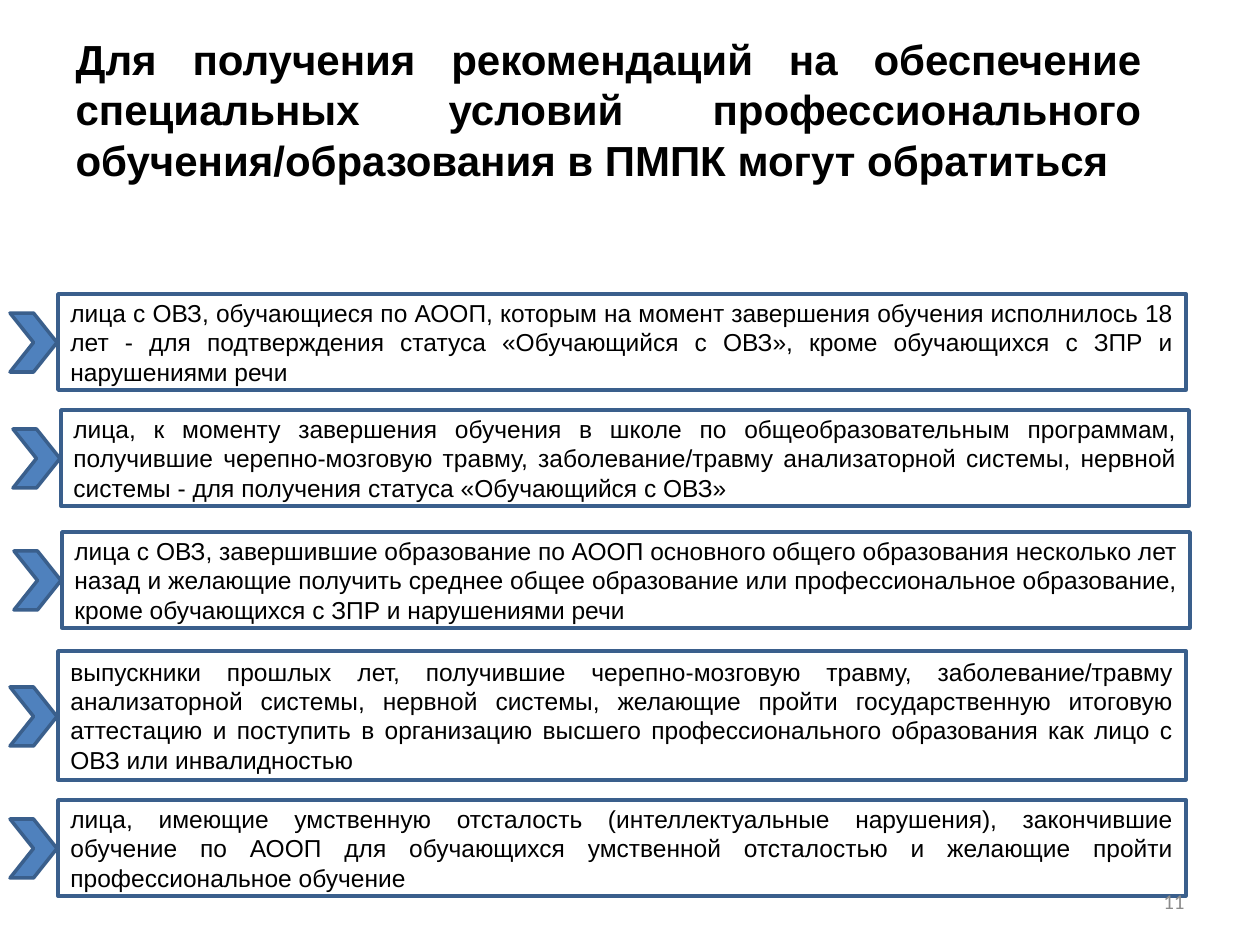
from pptx import Presentation
from pptx.dml.color import RGBColor
from pptx.enum.shapes import MSO_SHAPE
from pptx.enum.text import MSO_ANCHOR, PP_ALIGN
from pptx.util import Emu, Pt

BLACK = RGBColor(0, 0, 0)
GRAY = RGBColor(0x8C, 0x8C, 0x8C)
BLUE = RGBColor(0x4F, 0x81, 0xBD)
DARK_BLUE = RGBColor(0x3A, 0x5F, 0x8C)

PX_PER_INCH = 126
BOX_WIDTH = 1128
CHEVRON_WIDTH, CHEVRON_HEIGHT = 47, 59
CHEVRON_OFFSET = 48

# left, top, height, text
GROUPS = [
    (58, 294, 96, "лица с ОВЗ, обучающиеся по АООП, которым на момент завершения обучения "
     "исполнилось 18 лет - для подтверждения статуса «Обучающийся с ОВЗ», "
     "кроме обучающихся с ЗПР и нарушениями речи"),
    (61, 410, 96, "лица, к моменту завершения обучения в школе по общеобразовательным "
     "программам, получившие черепно-мозговую травму, заболевание/травму "
     "анализаторной системы, нервной системы - для получения статуса "
     "«Обучающийся с ОВЗ»"),
    (62, 532, 96, "лица с ОВЗ, завершившие образование по АООП основного общего "
     "образования несколько лет назад и желающие получить среднее общее "
     "образование или профессиональное образование, кроме обучающихся с ЗПР "
     "и нарушениями речи"),
    (58, 651, 129, "выпускники прошлых лет, получившие черепно-мозговую травму, "
     "заболевание/травму анализаторной системы, нервной системы, желающие "
     "пройти государственную итоговую аттестацию и поступить в организацию "
     "высшего профессионального образования как лицо с ОВЗ или инвалидностью"),
    (58, 800, 96, "лица, имеющие умственную отсталость (интеллектуальные нарушения), "
     "закончившие обучение по АООП для обучающихся умственной отсталостью "
     "и желающие пройти профессиональное обучение"),
]


def px(*lengths):
    return [Emu(round(length * 914400 / PX_PER_INCH)) for length in lengths]


def write(shape, text, size, color, alignment, anchor, font_name="Arial", bold=False):
    frame = shape.text_frame
    frame.word_wrap = True
    frame.vertical_anchor = anchor
    frame.text = text
    paragraph = frame.paragraphs[0]
    paragraph.alignment = alignment
    paragraph.font.name = font_name
    paragraph.font.size = Pt(size)
    paragraph.font.bold = bold
    paragraph.font.color.rgb = color


presentation = Presentation()
presentation.slide_width, presentation.slide_height = px(1260, 945)
slide = presentation.slides.add_slide(presentation.slide_layouts[5])

# Title
title = slide.shapes.title
title.left, title.top, title.width, title.height = px(63, 27, 1091, 165)
write(title, "Для получения рекомендаций на обеспечение специальных условий "
      "профессионального обучения/образования в ПМПК могут обратиться",
      24, BLACK, PP_ALIGN.JUSTIFY, MSO_ANCHOR.TOP, bold=True)

# Framed groups of applicants, each with a chevron centred at its left
for left, top, height, text in GROUPS:
    box = slide.shapes.add_shape(MSO_SHAPE.RECTANGLE, *px(left, top, BOX_WIDTH, height))
    box.fill.background()
    write(box, text, 14, BLACK, PP_ALIGN.JUSTIFY, MSO_ANCHOR.MIDDLE)

    chevron_top = top + (height - CHEVRON_HEIGHT) // 2 + 1
    chevron = slide.shapes.add_shape(
        MSO_SHAPE.CHEVRON,
        *px(left - CHEVRON_OFFSET, chevron_top, CHEVRON_WIDTH, CHEVRON_HEIGHT))
    chevron.fill.solid()
    chevron.fill.fore_color.rgb = BLUE

    for shape in (box, chevron):
        shape.shadow.inherit = False
        shape.line.color.rgb = DARK_BLUE
        shape.line.width = Pt(2)

# Slide number
number = slide.shapes.add_textbox(*px(903, 876, 294, 50))
write(number, "11", 12, GRAY, PP_ALIGN.RIGHT, MSO_ANCHOR.MIDDLE, font_name="Calibri")

presentation.save("out.pptx")
